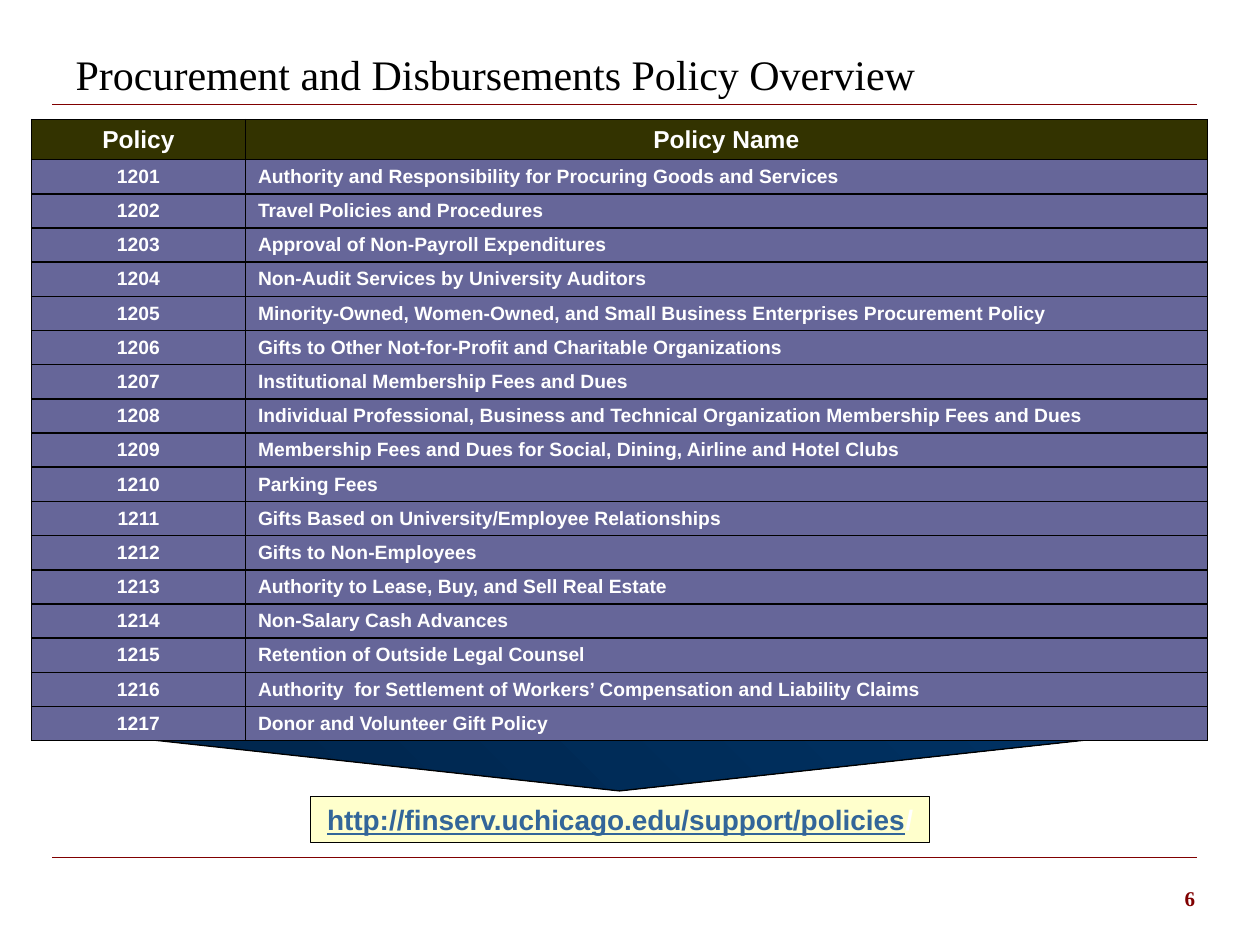
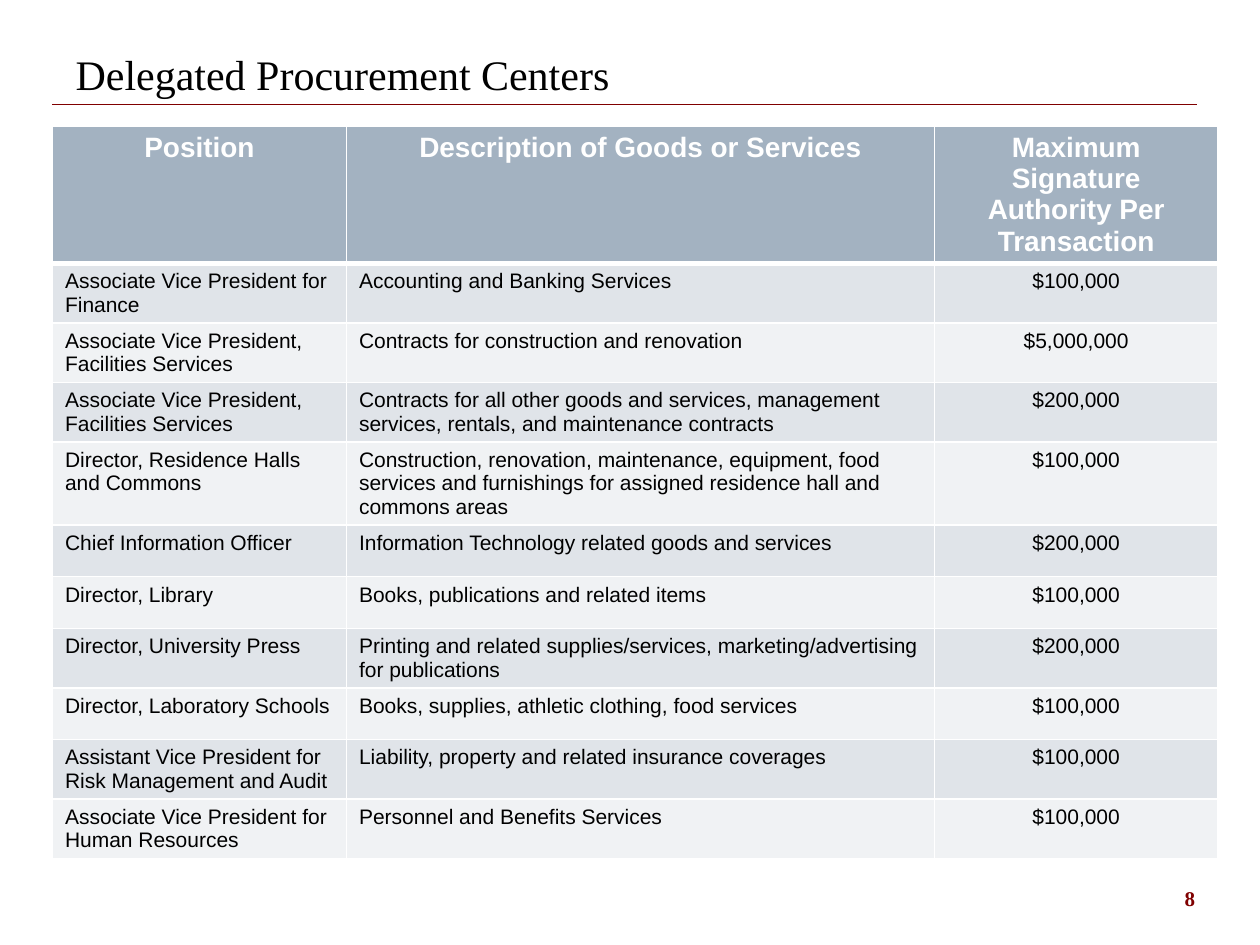
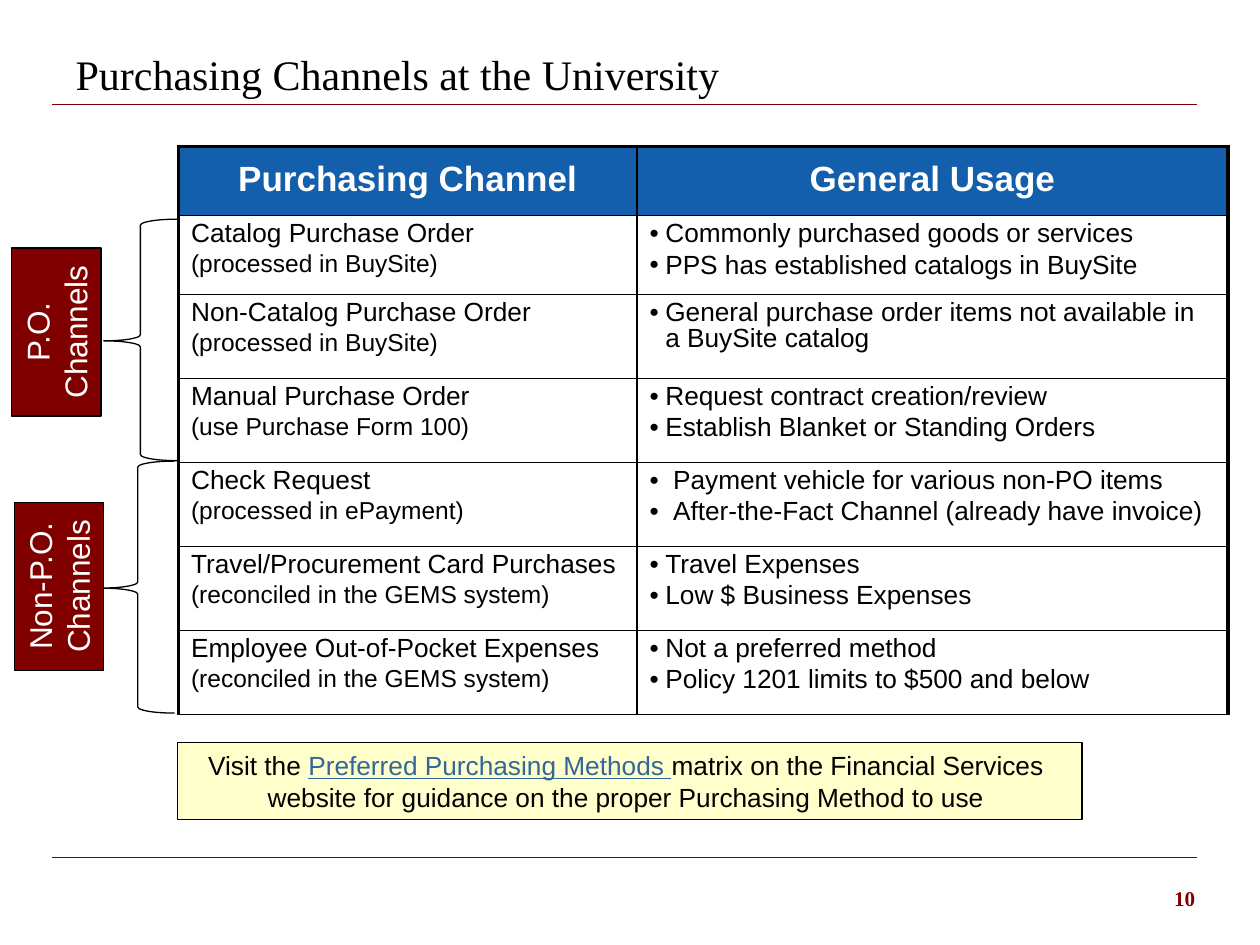
import pptx
import pptx.dml.color
import pptx.enum.dml
import pptx.enum.shapes
import pptx.enum.text
import pptx.oxml
import pptx.oxml.ns
import pptx.util
from lxml import etree

Pt = pptx.util.Pt
ALIGN = pptx.enum.text.PP_ALIGN
ANCHOR = pptx.enum.text.MSO_ANCHOR
PRESET = pptx.enum.shapes.MSO_SHAPE
qn = pptx.oxml.ns.qn

# Shared colours and text formats
BLACK, WHITE, MAROON = "000000", "FFFFFF", "800000"
CREAM, LINK = "FFFFCC", "336699"
TITLE_FONT = {"name": "Times New Roman", "size": Pt(24), "color": BLACK}
NUMBER_FONT = {"name": "Times New Roman", "size": Pt(12), "bold": True, "color": MAROON}
CENTERED = {"alignment": ALIGN.CENTER}
LEFT = {"alignment": ALIGN.LEFT}


def arial(size, color=BLACK, bold=False):
    return {"name": "Arial", "size": Pt(size), "color": color, "bold": bold}


def rgb(color):
    return pptx.dml.color.RGBColor.from_string(color)


def apply(target, formats):
    for attribute, value in formats.items():
        if attribute == "color":
            target.color.rgb = rgb(value)
        else:
            setattr(target, attribute, value)


def write(frame, paragraphs, font, layout=LEFT, hanging=0, gap=0):
    """Each paragraph is a string or a list of (text, font changes)."""
    for index, content in enumerate(paragraphs):
        paragraph = frame.paragraphs[0] if index == 0 else frame.add_paragraph()
        if hanging:
            properties = paragraph._p.get_or_add_pPr()
            properties.set("marL", str(Pt(hanging)))
            properties.set("indent", str(-Pt(hanging)))
            etree.SubElement(properties, qn("a:buFont")).set("typeface", "Arial")
            etree.SubElement(properties, qn("a:buChar")).set("char", "•")
        apply(paragraph, layout)
        if index and gap:
            paragraph.space_before = Pt(gap)
        runs = [(content, {})] if isinstance(content, str) else content
        for text, changes in runs:
            run = paragraph.add_run()
            run.text = text
            apply(run.font, {**font, **changes})


def write_cell(cell, text, size, color=BLACK, bold=False, layout=LEFT):
    """Fixed line height keeps each row at its given height."""
    fixed = {"line_spacing": Pt(round(1.115 * size, 1))}
    write(cell.text_frame, [text], arial(size, color, bold), {**layout, **fixed})


def points(box):
    return [Pt(round(length, 2)) for length in box]


def outlined(slide, preset, box, fill=None):
    shape = slide.shapes.add_shape(preset, *points(box))
    shape.shadow.inherit = False
    shape.line.color.rgb = rgb(BLACK)
    shape.line.width = Pt(0.75)
    if fill:
        shape.fill.solid()
        shape.fill.fore_color.rgb = rgb(fill)
    else:
        shape.fill.background()
    return shape


# Parts on every slide
def add_rules(slide):
    """Draws the two maroon rules and hands them to the slide's layout."""
    for height in (59.85, 490.1):
        rule = slide.shapes.add_connector(
            pptx.enum.shapes.MSO_CONNECTOR.STRAIGHT, *points((30, height, 684, height)))
        rule.line.color.rgb = rgb(MAROON)
        rule.line.width = Pt(0.75)
        etree.SubElement(rule._element.spPr, qn("a:effectLst"))
        slide.slide_layout.shapes._spTree.append(rule._element)


def start_slide(deck, heading, number):
    slide = deck.slides.add_slide(deck.slide_layouts[5])
    title = slide.shapes.title
    apply(title, dict(zip(("left", "top", "width", "height"), points((36, 18, 630, 42)))))
    apply(title.text_frame, {"vertical_anchor": ANCHOR.BOTTOM, "word_wrap": True,
                             "auto_size": pptx.enum.text.MSO_AUTO_SIZE.NONE})
    write(title.text_frame, [heading], TITLE_FONT)
    page = slide.shapes.add_textbox(*points((534, 502.5, 156, 37.5)))
    page.text_frame.word_wrap = True
    write(page.text_frame, [str(number)], NUMBER_FONT, {"alignment": ALIGN.RIGHT})
    return slide


# Tables
def set_borders(cell, color, widths):
    properties = cell._tc.get_or_add_tcPr()
    for side in "LRTB":
        border = etree.SubElement(properties, qn(f"a:ln{side}"), w=str(Pt(widths.get(side, 1))))
        paint = etree.SubElement(border, qn("a:solidFill"))
        etree.SubElement(paint, qn("a:srgbClr"), val=color)


def add_grid(slide, corner, widths, heights, border, edge_widths, row_fill):
    box = (*corner, sum(widths), sum(heights))
    grid = slide.shapes.add_table(len(heights), len(widths), *points(box)).table
    apply(grid, {"first_row": False, "horz_banding": False})
    for column, width in zip(grid.columns, widths):
        column.width = Pt(width)
    for r, height in enumerate(heights):
        grid.rows[r].height = Pt(height)
        for c in range(len(widths)):
            cell = grid.cell(r, c)
            set_borders(cell, border, edge_widths(r, c))
            cell.fill.solid()
            cell.fill.fore_color.rgb = rgb(row_fill(r))
    return grid


# Policy overview
POLICIES = [
    "Authority and Responsibility for Procuring Goods and Services",
    "Travel Policies and Procedures",
    "Approval of Non-Payroll Expenditures",
    "Non-Audit Services by University Auditors",
    "Minority-Owned, Women-Owned, and Small Business Enterprises Procurement Policy",
    "Gifts to Other Not-for-Profit and Charitable Organizations",
    "Institutional Membership Fees and Dues",
    "Individual Professional, Business and Technical Organization Membership Fees and Dues",
    "Membership Fees and Dues for Social, Dining, Airline and Hotel Clubs",
    "Parking Fees",
    "Gifts Based on University/Employee Relationships",
    "Gifts to Non-Employees",
    "Authority to Lease, Buy, and Sell Real Estate",
    "Non-Salary Cash Advances",
    "Retention of Outside Legal Counsel",
    "Authority  for Settlement of Workers’ Compensation and Liability Claims",
    "Donor and Volunteer Gift Policy",
]


def add_policy_pointer(slide, box):
    pointer = outlined(slide, PRESET.ISOSCELES_TRIANGLE, box, BLACK)
    pointer._element.spPr.xfrm.set("flipV", "1")
    pointer.fill.gradient()
    pointer.fill.gradient_angle = 315
    for stop, color in zip(pointer.fill.gradient_stops, ("002449", "003366")):
        stop.color.rgb = rgb(color)


def add_policy_table(slide, corner):
    grid = add_grid(slide, corner, (122.25, 549.75), [22.8] + [19.5] * len(POLICIES), BLACK,
                    lambda r, c: {}, lambda r: "666699" if r else "333300")
    for c, heading in enumerate(("Policy", "Policy Name")):
        grid.cell(0, c).vertical_anchor = ANCHOR.MIDDLE
        write_cell(grid.cell(0, c), heading, 14, WHITE, True, CENTERED)
    for r, policy in enumerate(POLICIES, 1):
        write_cell(grid.cell(r, 0), str(1200 + r), 11, WHITE, True, CENTERED)
        write_cell(grid.cell(r, 1), policy, 11, WHITE, True)


def add_callout(slide, box, paragraphs, font, wrap=True):
    callout = outlined(slide, PRESET.RECTANGLE, box, CREAM)
    apply(callout.text_frame, {"word_wrap": wrap, "vertical_anchor": ANCHOR.MIDDLE})
    write(callout.text_frame, paragraphs, font, CENTERED)


def policy_slide(deck):
    slide = start_slide(deck, "Procurement and Disbursements Policy Overview", 6)
    add_rules(slide)
    add_policy_pointer(slide, (24, 416, 660, 36))
    add_policy_table(slide, (18, 68.4))
    address = [("http://finserv.uchicago.edu/support/policies", {"color": LINK, "underline": True}),
               ("/", {})]
    add_callout(slide, (177.4, 455, 354, 26.5), [address], arial(16, WHITE, True), wrap=False)


# Delegated procurement centers
CENTER_HEADINGS = ("Position", "Description of Goods or Services",
                   "Maximum Signature Authority Per Transaction")
# Position, goods or services, limit, text lines
CENTERS = [
    ("Associate Vice President for Finance", "Accounting and Banking Services", "$100,000", 2),
    ("Associate Vice President, Facilities Services",
     "Contracts for construction and renovation", "$5,000,000", 2),
    ("Associate Vice President, Facilities Services",
     "Contracts for all other goods and services, management services, rentals, "
     "and maintenance contracts", "$200,000", 2),
    ("Director, Residence Halls and Commons",
     "Construction, renovation, maintenance, equipment, food services and furnishings "
     "for assigned residence hall and commons areas", "$100,000", 3),
    ("Chief Information Officer", "Information Technology related goods and services",
     "$200,000", 1),
    ("Director, Library", "Books, publications and related items", "$100,000", 1),
    ("Director, University Press",
     "Printing and related supplies/services, marketing/advertising for publications",
     "$200,000", 2),
    ("Director, Laboratory Schools", "Books, supplies, athletic clothing, food services",
     "$100,000", 1),
    ("Assistant Vice President for Risk Management and Audit",
     "Liability, property and related insurance coverages", "$100,000", 2),
    ("Associate Vice President for Human Resources", "Personnel and Benefits Services",
     "$100,000", 2),
]
CENTER_HEIGHTS = {1: 29.5, 2: 34, 3: 47.5}


def add_center_table(slide, corner):
    heights = [78] + [CENTER_HEIGHTS[lines] for *_, lines in CENTERS]
    grid = add_grid(slide, corner, (168, 336, 162), heights, WHITE,
                    lambda r, c: {0: {"B": 3}, 1: {"T": 3}}.get(r, {}),
                    lambda r: ("F0F2F4", "E0E4E9")[r % 2] if r else "A3B2C1")
    for c, heading in enumerate(CENTER_HEADINGS):
        write_cell(grid.cell(0, c), heading, 16, WHITE, True, CENTERED)
    for r, (*texts, _) in enumerate(CENTERS, 1):
        for c, text in enumerate(texts):
            write_cell(grid.cell(r, c), text, 12, layout=CENTERED if c == 2 else LEFT)


def center_slide(deck):
    slide = start_slide(deck, "Delegated Procurement Centers", 8)
    add_center_table(slide, (30, 72))


# Purchasing channels
# Channel, how it is handled, bullet indent, usage
CHANNELS = [
    ("Catalog Purchase Order", "(processed in BuySite)", 9,
     ["Commonly purchased goods or services", "PPS has established catalogs in BuySite"]),
    ("Non-Catalog Purchase Order", "(processed in BuySite)", 9,
     ["General purchase order items not available in a BuySite catalog"]),
    ("Manual Purchase Order", "(use Purchase Form 100)", 9,
     ["Request contract creation/review", "Establish Blanket or Standing Orders"]),
    ("Check Request", "(processed in ePayment)", 13.5,
     ["Payment vehicle for various non-PO items",
      "After-the-Fact Channel (already have invoice)"]),
    ("Travel/Procurement Card Purchases", "(reconciled in the GEMS system)", 9,
     ["Travel Expenses", "Low $ Business Expenses"]),
    ("Employee Out-of-Pocket Expenses", "(reconciled in the GEMS system)", 9,
     ["Not a preferred method", "Policy 1201 limits to $500 and below"]),
]


def channel_edges(r, c):
    heavy = {"L": c == 0, "R": c == 1, "T": r == 0}
    return {side: 2.25 for side, outer in heavy.items() if outer}


def add_channel_table(slide, corner):
    grid = add_grid(slide, corner, (262, 337.75), [39.5, 45] + [48] * 5, BLACK,
                    channel_edges, lambda r: WHITE if r else "145FAB")
    tight = {"line_spacing": 0.9}
    for c, heading in enumerate(("Purchasing Channel", "General Usage")):
        grid.cell(0, c).vertical_anchor = ANCHOR.MIDDLE
        write(grid.cell(0, c).text_frame, [heading], arial(20, WHITE, True),
              {**CENTERED, **tight})
    for r, (channel, handling, hanging, usage) in enumerate(CHANNELS, 1):
        write(grid.cell(r, 0).text_frame, [channel, [(handling, {"size": Pt(14)})]],
              arial(15), {**LEFT, **tight}, gap=2.8)
        write(grid.cell(r, 1).text_frame, usage, arial(15), {**LEFT, **tight}, hanging, gap=2.8)


def add_channel_group(slide, box, name, label_rise):
    """A brace on the right of the box, and a label turned upwards on its left."""
    left, top, width, height = box
    brace = outlined(slide, PRESET.LEFT_BRACE, (left + width - 42, top, 42, height))
    brace.adjustments[0], brace.adjustments[1] = 0.083, 0.504
    length, depth = 96, 51
    middle = top + height / 2 - label_rise
    label = outlined(slide, PRESET.RECTANGLE,
                     (left + (depth - length) / 2, middle - depth / 2, length, depth), MAROON)
    label.rotation = 270
    apply(label.text_frame, {"word_wrap": True, "vertical_anchor": ANCHOR.TOP})
    write(label.text_frame, [name], arial(18, WHITE), CENTERED)


def channel_slide(deck):
    slide = start_slide(deck, "Purchasing Channels at the University", 10)
    add_channel_table(slide, (102, 83.75))
    advice = [
        [("Visit the ", {}),
         ("Preferred Purchasing Methods ", {"color": LINK, "underline": True}),
         ("matrix on the Financial Services ", {})],
        "website for guidance on the proper Purchasing Method to use ",
    ]
    add_callout(slide, (101.25, 424.25, 517, 44), advice, arial(15))
    add_channel_group(slide, (6.75, 125.25, 94.5, 138), "P.O. Channels", 4.5)
    add_channel_group(slide, (8.25, 263.5, 91.5, 144), "Non-P.O. Channels", 0.5)


def main():
    deck = pptx.Presentation()
    deck.slide_width, deck.slide_height = Pt(720), Pt(540)
    policy_slide(deck)
    center_slide(deck)
    channel_slide(deck)
    deck.save("out.pptx")


if __name__ == "__main__":
    main()
